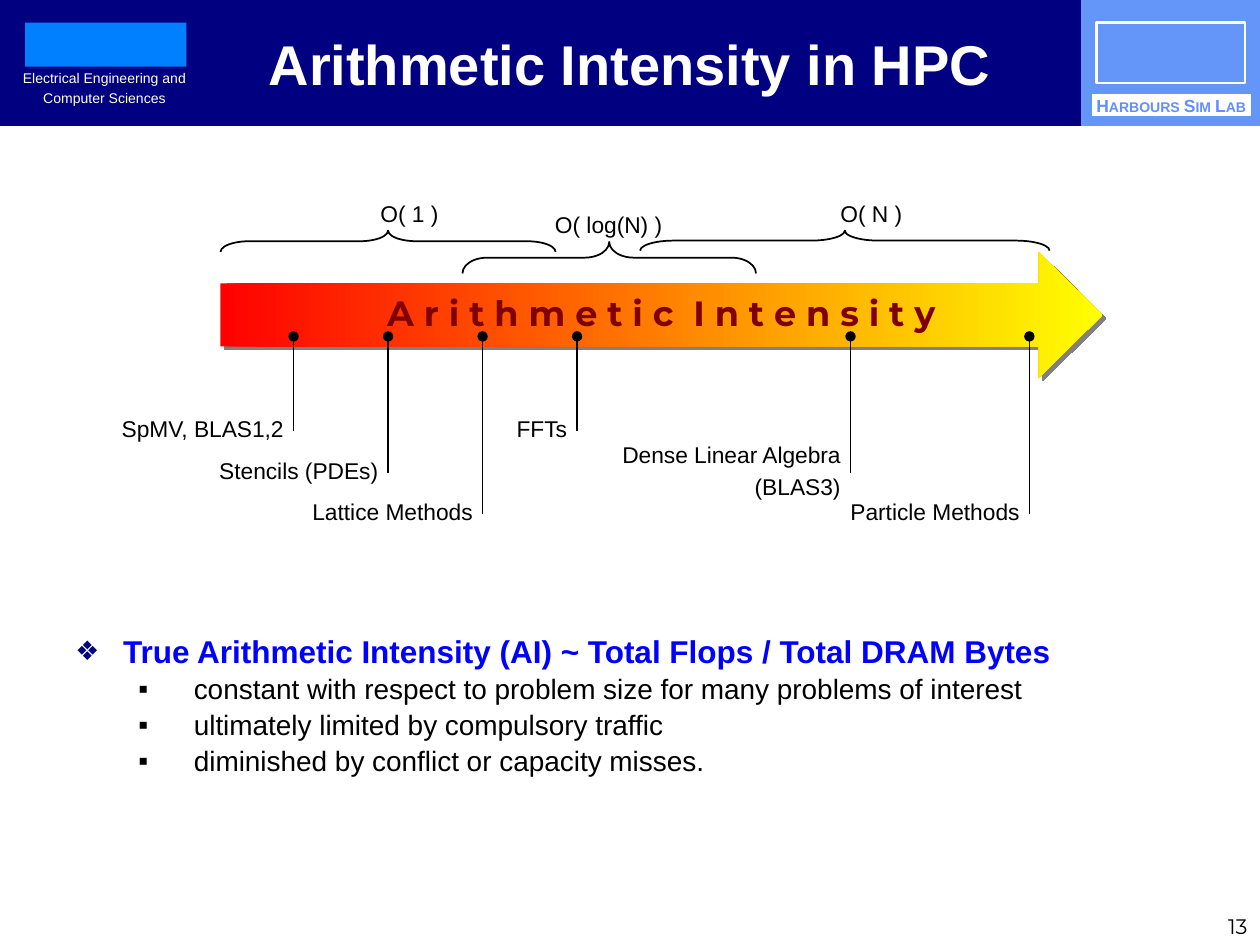
from lxml import etree
from pptx import Presentation
from pptx.dml.color import RGBColor
from pptx.enum.shapes import MSO_CONNECTOR, MSO_SHAPE
from pptx.enum.text import MSO_ANCHOR, PP_ALIGN
from pptx.oxml.ns import qn
from pptx.util import Inches, Pt

LEFT, CENTER, RIGHT = PP_ALIGN.LEFT, PP_ALIGN.CENTER, PP_ALIGN.RIGHT
TOP, MIDDLE, BOTTOM = MSO_ANCHOR.TOP, MSO_ANCHOR.MIDDLE, MSO_ANCHOR.BOTTOM
RECT, ARROW, BRACE = MSO_SHAPE.RECTANGLE, MSO_SHAPE.RIGHT_ARROW, MSO_SHAPE.LEFT_BRACE
STRAIGHT = MSO_CONNECTOR.STRAIGHT

COLORS = {name: RGBColor.from_string(value) for name, value in {
    "navy": "000080", "sky": "0080FF", "panel": "6496FA", "lab": "618FFD",
    "white": "FFFFFF", "black": "000000", "blue": "0000FF", "red": "FF0000",
    "yellow": "FFFF00", "maroon": "800000", "shadow": "808080"}.items()}

prs = Presentation()
prs.slide_width, prs.slide_height = Inches(10), Inches(7.5)
s = prs.slides.add_slide(prs.slide_layouts[6])


def add_shape(kind, box, fill=None, line=None, width=0.75):
    sp = s.shapes.add_shape(kind, *[Inches(v) for v in box])
    sp.shadow.inherit = False
    if fill:
        sp.fill.solid()
        sp.fill.fore_color.rgb = COLORS[fill]
    else:
        sp.fill.background()
    if line:
        sp.line.color.rgb = COLORS[line]
        sp.line.width = Pt(width)
    else:
        sp.line.fill.background()
    return sp


def add_text(box, paragraphs, align=CENTER, font="Arial", bold=False, sp=None,
             anchor=MIDDLE, wrap=True, inset=(0, 0), spacing=0.9, before=0.32):
    """Each paragraph is a list of (text, size, colour) runs."""
    sp = sp or s.shapes.add_textbox(*[Inches(v) for v in box])
    tf = sp.text_frame
    tf.word_wrap, tf.vertical_anchor = wrap, anchor
    tf.margin_left = tf.margin_right = Inches(inset[0])
    tf.margin_top = tf.margin_bottom = Inches(inset[1])
    for i, runs in enumerate(paragraphs):
        p = tf.paragraphs[0] if i == 0 else tf.add_paragraph()
        p.alignment, p.line_spacing = align, spacing
        p.space_before = Pt(round(before * runs[0][1], 1))
        for text, size, color in runs:
            r = p.add_run()
            r.text = text
            r.font.size, r.font.name, r.font.bold = Pt(size), font, bold
            r.font.color.rgb = COLORS[color]
    return tf


# Header band with department name and lab panel
add_shape(RECT, (0, 0, 10, 1), "navy")
add_shape(RECT, (0.2, 0.18, 1.28, 0.35), "sky")
add_text((0.08, 0.58, 1.5, 0.25),
         [[("Electrical Engineering and", 8, "white")],
          [("Computer Sciences", 8, "white")]])
add_shape(RECT, (8.58, 0, 1.42, 1), "panel")
add_shape(RECT, (8.7, 0.18, 1.18, 0.48), line="white", width=1.5)
lab = add_shape(RECT, (8.67, 0.75, 1.25, 0.17), "white", "white")
lab_runs = [("H", 10, "lab"), ("ARBOURS ", 8, "lab"), ("S", 10, "lab"),
            ("IM ", 8, "lab"), ("L", 10, "lab"), ("AB", 8, "lab")]
add_text(None, [lab_runs], bold=True, sp=lab, spacing=1, before=0)

# Title and page number
add_text((0, 0, 10, 1), [[("Arithmetic Intensity in HPC", 32, "white")]],
         bold=True, inset=(0.1, 0.05), spacing=1, before=0)
add_text((7.67, 7.24, 2.33, 0.26), [[("13", 12, "black")]], align=RIGHT,
         font="Montserrat", anchor=BOTTOM, inset=(0.1, 0.05), spacing=1, before=0)

# Bulleted statement
heading = "True Arithmetic Intensity (AI) ~ Total Flops / Total DRAM Bytes"
points = ["constant with respect to problem size for many problems of interest",
          "ultimately limited by compulsory traffic",
          "diminished by conflict or capacity misses."]
tf = add_text((0.5, 5, 9, 2),
              [[(heading, 18, "blue")]] + [[(t, 16, "black")] for t in points],
              align=LEFT, anchor=TOP, inset=(0.1, 0.05), before=0.2)
for i, p in enumerate(tf.paragraphs):
    first = i == 0
    p.runs[0].font.bold = first
    p.level = 0 if first else 1
    pPr = p._p.get_or_add_pPr()
    pPr.set("marL", str(Inches(0.38 if first else 0.94)))
    pPr.set("indent", str(Inches(-0.38 if first else -0.44)))
    if first:
        color = etree.SubElement(pPr, qn("a:buClr"))
        etree.SubElement(color, qn("a:srgbClr"), val=str(COLORS["navy"]))
        etree.SubElement(pPr, qn("a:buSzPct"), val="85000")
    etree.SubElement(pPr, qn("a:buFont"), typeface="Arial")
    etree.SubElement(pPr, qn("a:buChar"), char="❖" if first else "▪")

# Gradient arrow with a hard shadow
arrow = add_shape(ARROW, (1.75, 2, 7, 1))
arrow.adjustments[0], arrow.adjustments[1] = 0.5, 0.505
arrow.fill.gradient()
arrow.fill.gradient_angle = 0
for stop, color in zip(arrow.fill.gradient_stops, ("red", "yellow")):
    stop.color.rgb = COLORS[color]
effects = arrow._element.spPr.find(qn("a:effectLst"))
shadow = etree.SubElement(effects, qn("a:outerShdw"), dist=str(Pt(2.8)),
                          dir="2700000", algn="ctr", rotWithShape="0")
etree.SubElement(shadow, qn("a:srgbClr"), val=str(COLORS["shadow"]))
add_text((2.25, 2.3, 6, 0.4),
         [[("A r i t h m e t i c  I n t e n s i t y", 20, "maroon")]],
         font="Montserrat", bold=True, inset=(0.1, 0.05))

# Complexity braces: left, top, length, depth, curve, label, label box
braces = [(5.08, 1.83, 3.25, 0.16, 1.677, "O( N )", (6.24, 1.58, 1.35, 0.25)),
          (1.75, 1.83, 2.66, 0.17, 1.332, "O( 1 )", (2.75, 1.58, 1, 0.25)),
          (3.67, 1.92, 2.33, 0.25, 0.778, "O( log(N) )", (4.33, 1.67, 1, 0.25))]
for x, y, length, depth, curve, label, box in braces:
    # The upright frame shares its centre with the turned brace
    brace = add_shape(BRACE, (x + (length - depth) / 2, y + (depth - length) / 2,
                              depth, length), line="black", width=1)
    brace.rotation = 90
    brace.adjustments[0], brace.adjustments[1] = curve, 0.5
    add_text(box, [[(label, 13, "black")]], wrap=False)

# Kernels along the arrow: x, end of the leader, label lines
kernels = [(2.33, 3.42, ["SpMV, BLAS1,2"]), (3.08, 3.75, ["Stencils (PDEs)"]),
           (3.83, 4.08, ["Lattice Methods"]), (4.58, 3.42, ["FFTs"]),
           (6.75, 3.75, ["Dense Linear Algebra", "(BLAS3)"]),
           (8.17, 4.08, ["Particle Methods"])]
label_width = 2
for x, end, lines in kernels:
    leader = s.shapes.add_connector(STRAIGHT, Inches(x), Inches(2.67),
                                    Inches(x), Inches(end))
    leader.line.color.rgb = COLORS["black"]
    leader.line.width = Pt(1)
    etree.SubElement(leader.line._get_or_add_ln(), qn("a:headEnd"), type="oval")
    etree.SubElement(leader._element.spPr, qn("a:effectLst"))
    add_text((x - 0.08 - label_width, end - 0.17, label_width, 0.33),
             [[(line, 13, "black")] for line in lines], align=RIGHT)

prs.save("out.pptx")
